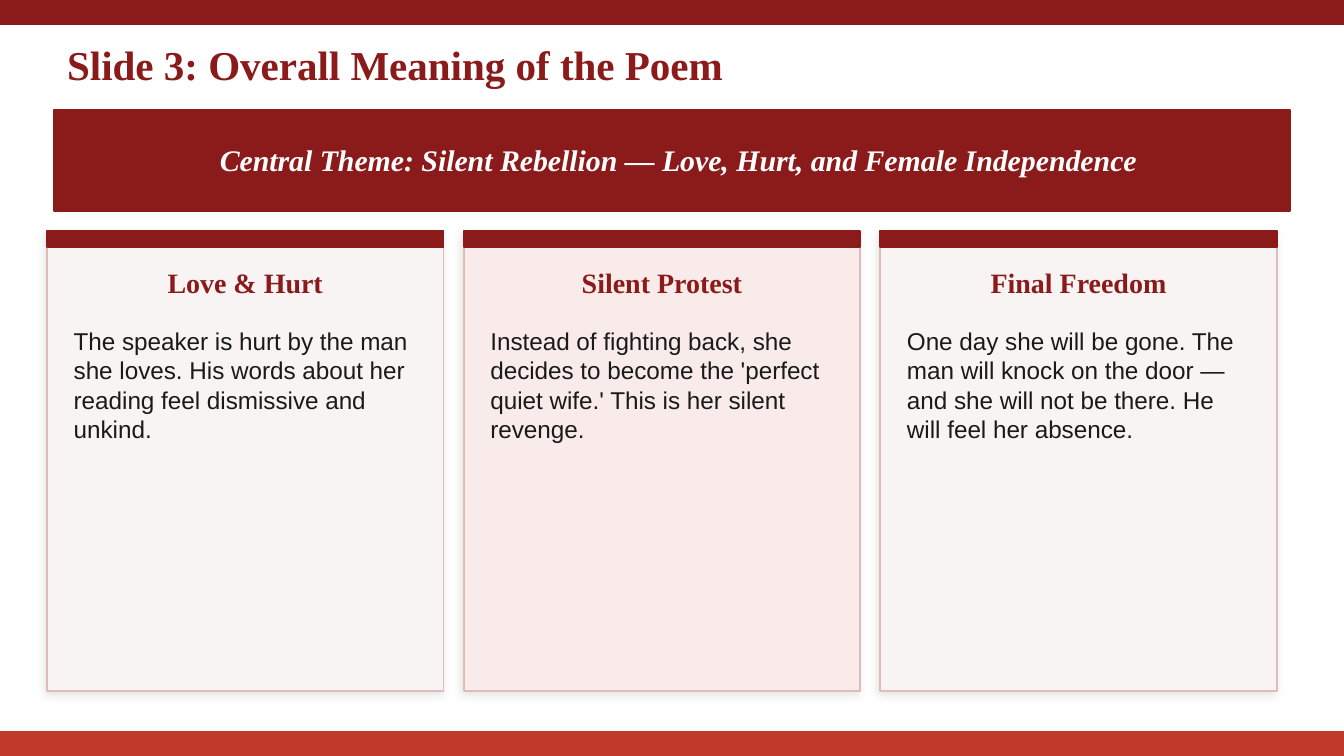
from lxml import etree
from pptx import Presentation
from pptx import util as u
from pptx.dml.color import RGBColor
from pptx.enum import shapes, text
from pptx.oxml import ns

MAROON = RGBColor(0x8B, 0x1A, 0x1A)
BRICK = RGBColor(0xC0, 0x39, 0x2B)
WHITE = RGBColor(0xFF, 0xFF, 0xFF)
INK = RGBColor(0x1A, 0x1A, 0x1A)
ROSE = RGBColor(0xE0, 0xBB, 0xBB)
PALE_GREY = RGBColor(0xF8, 0xF4, 0xF4)
PALE_PINK = RGBColor(0xF9, 0xEB, 0xEA)

SERIF = "Times New Roman"
MIDDLE, TOP = text.MSO_ANCHOR.MIDDLE, text.MSO_ANCHOR.TOP
LEFT, CENTER = text.PP_ALIGN.LEFT, text.PP_ALIGN.CENTER

TITLE = {"name": SERIF, "size": u.Pt(22), "bold": True}
THEME = {"name": SERIF, "size": u.Pt(16), "bold": True, "italic": True}
HEADING = {"name": SERIF, "size": u.Pt(15), "bold": True}
BODY = {"name": "Arial", "size": u.Pt(13)}

# Widescreen page, 16:9
page_width = 10
page_height = page_width * 9 / 16
deck = Presentation()
deck.slide_width, deck.slide_height = u.Inches(page_width), u.Inches(page_height)
page = deck.slides.add_slide(deck.slide_layouts[5])


def add_panel(left, top, width, height, fill, line):
    panel = page.shapes.add_shape(
        shapes.MSO_SHAPE.RECTANGLE, *map(u.Inches, (left, top, width, height)))
    panel.shadow.inherit = False
    panel.fill.solid()
    panel.fill.fore_color.rgb = fill
    panel.line.color.rgb = line
    panel.line.width = u.Pt(1)
    return panel


def write(box, place, words, style, color, align=LEFT, anchor=MIDDLE):
    box.left, box.top, box.width, box.height = map(u.Inches, place)
    frame = box.text_frame
    frame.word_wrap = True
    frame.auto_size = text.MSO_AUTO_SIZE.NONE
    frame.vertical_anchor = anchor
    para = frame.paragraphs[0]
    para.alignment = align
    span = para.add_run()
    span.text = words
    for key, value in style.items():
        setattr(span.font, key, value)
    span.font.color.rgb = color


# Top and bottom bars
bar_height = 0.18
add_panel(0, 0, page_width, bar_height, MAROON, MAROON)
add_panel(0, page_height - bar_height, page_width, bar_height, BRICK, BRICK)

# Title
write(page.shapes.title, (0.4, 0.25, 9.2, 0.45),
      "Slide 3: Overall Meaning of the Poem", TITLE, MAROON)

# Central theme banner
add_panel(0.4, 0.82, 9.2, 0.75, MAROON, MAROON)
write(page.shapes.add_textbox(0, 0, 0, 0), (0.55, 0.93, 9, 0.52),
      "Central Theme: Silent Rebellion — Love, Hurt, and Female Independence",
      THEME, WHITE, CENTER)

# Three cards
cards = [
    ("Love & Hurt", PALE_GREY,
     "The speaker is hurt by the man she loves. His words about her reading "
     "feel dismissive and unkind."),
    ("Silent Protest", PALE_PINK,
     "Instead of fighting back, she decides to become the 'perfect quiet "
     "wife.' This is her silent revenge."),
    ("Final Freedom", PALE_GREY,
     "One day she will be gone. The man will knock on the door — and she "
     "will not be there. He will feel her absence."),
]
card_width, gap = 2.95, 0.15
for index, (heading, fill, body) in enumerate(cards):
    left = 0.35 + index * (card_width + gap)
    card = add_panel(left, 1.72, card_width, 3.42, fill, ROSE)

    # Soft shadow at 10 % opacity
    effects = card.element.spPr.find(ns.qn("a:effectLst"))
    shadow = etree.SubElement(
        effects, ns.qn("a:outerShdw"), blurRad=str(u.Pt(5)),
        dist=str(u.Pt(2)), dir=str(135 * 60000), algn="bl", rotWithShape="0")
    black = etree.SubElement(shadow, ns.qn("a:srgbClr"), val="000000")
    etree.SubElement(black, ns.qn("a:alpha"), val="10000")

    add_panel(left, 1.72, card_width, 0.12, MAROON, MAROON)
    write(page.shapes.add_textbox(0, 0, 0, 0), (left + 0.1, 1.9, 2.75, 0.4),
          heading, HEADING, MAROON, CENTER)
    write(page.shapes.add_textbox(0, 0, 0, 0), (left + 0.1, 2.38, 2.75, 2.6),
          body, BODY, INK, anchor=TOP)

deck.save("out.pptx")
